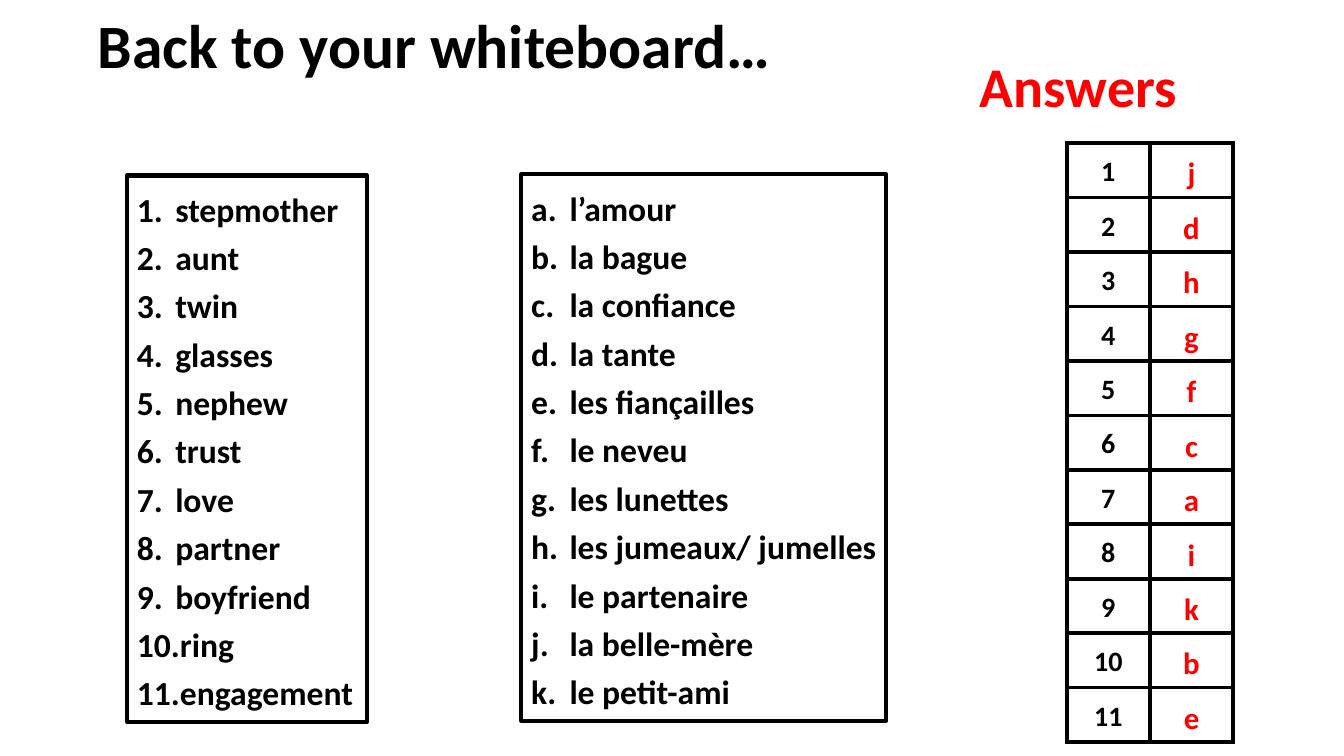
from lxml import etree
from pptx import Presentation
from pptx.dml.color import RGBColor
from pptx.enum.text import MSO_ANCHOR, MSO_AUTO_SIZE, PP_ALIGN
from pptx.oxml.ns import qn
from pptx.util import Inches, Pt

COLORS = {"black": "000000", "red": "FF0000"}
ENGLISH = ["stepmother", "aunt", "twin", "glasses", "nephew", "trust",
           "love", "partner", "boyfriend", "ring", "engagement"]
FRENCH = ["l’amour", "la bague", "la confiance", "la tante",
          "les fiançailles", "le neveu", "les lunettes",
          "les jumeaux/ jumelles", "le partenaire", "la belle-mère",
          "le petit-ami"]
ANSWERS = "jdhgfcaikbe"


def style(p, size, color):
    for r in p.runs:
        r.font.name = "Calibri"
        r.font.size = Pt(size)
        r.font.bold = True
        r.font.color.rgb = RGBColor.from_string(COLORS[color])


def add_text(text, left, top, width, height, size, color):
    sp = slide.shapes.add_textbox(Inches(left), Inches(top),
                                  Inches(width), Inches(height))
    tf = sp.text_frame
    tf.word_wrap = False
    tf.auto_size = MSO_AUTO_SIZE.SHAPE_TO_FIT_TEXT
    tf.text = text
    for p in tf.paragraphs:
        style(p, size, color)
    return sp


prs = Presentation()
prs.slide_width = Inches(13.33)
prs.slide_height = Inches(7.5)
slide = prs.slides.add_slide(prs.slide_layouts[6])

# Title
title = add_text("Back to your whiteboard…", 0.87, 0, 11.5, 0.96, 44, "black")
tf = title.text_frame
tf.word_wrap = True
tf.auto_size = MSO_AUTO_SIZE.NONE
tf.vertical_anchor = MSO_ANCHOR.MIDDLE
tf.paragraphs[0].line_spacing = 0.9

# Numbered English words and lettered French words
for words, numbering, left, top, width in [
        (ENGLISH, "arabicPeriod", 1.26, 1.74, 2.38),
        (FRENCH, "alphaLcPeriod", 5.17, 1.73, 3.62)]:
    sp = add_text("\n".join(words), left, top, width, 5.42, 24, "black")
    sp.line.color.rgb = RGBColor.from_string(COLORS["black"])
    sp.line.width = Pt(3)
    for p in sp.text_frame.paragraphs:
        pPr = p._p.get_or_add_pPr()
        pPr.set("marL", str(Inches(0.38)))
        pPr.set("indent", str(Inches(-0.38)))
        etree.SubElement(pPr, qn("a:buFont"), typeface="+mj-lt")
        etree.SubElement(pPr, qn("a:buAutoNum"), type=numbering)
        p.line_spacing = 1.2

# Answer table
table = slide.shapes.add_table(len(ANSWERS), 2, Inches(10.58), Inches(1.42),
                               Inches(1.65), Inches(5.94)).table
table.first_row = False
table.horz_banding = False
for row, letter in enumerate(ANSWERS):
    for col, (text, size, color) in enumerate([(str(row + 1), 20, "black"),
                                               (letter, 22, "red")]):
        cell = table.cell(row, col)
        cell.text = text
        p = cell.text_frame.paragraphs[0]
        p.alignment = PP_ALIGN.CENTER
        p.line_spacing = 1.2
        style(p, size, color)
        tcPr = cell._tc.get_or_add_tcPr()
        for side in ("a:lnL", "a:lnR", "a:lnT", "a:lnB"):
            ln = etree.SubElement(tcPr, qn(side), w=str(Pt(3)))
            fill = etree.SubElement(ln, qn("a:solidFill"))
            etree.SubElement(fill, qn("a:srgbClr"), val=COLORS["black"])
        cell.fill.background()

# Answers heading
add_text("Answers", 9.62, 0.46, 2.19, 0.77, 40, "red")

prs.save("out.pptx")
